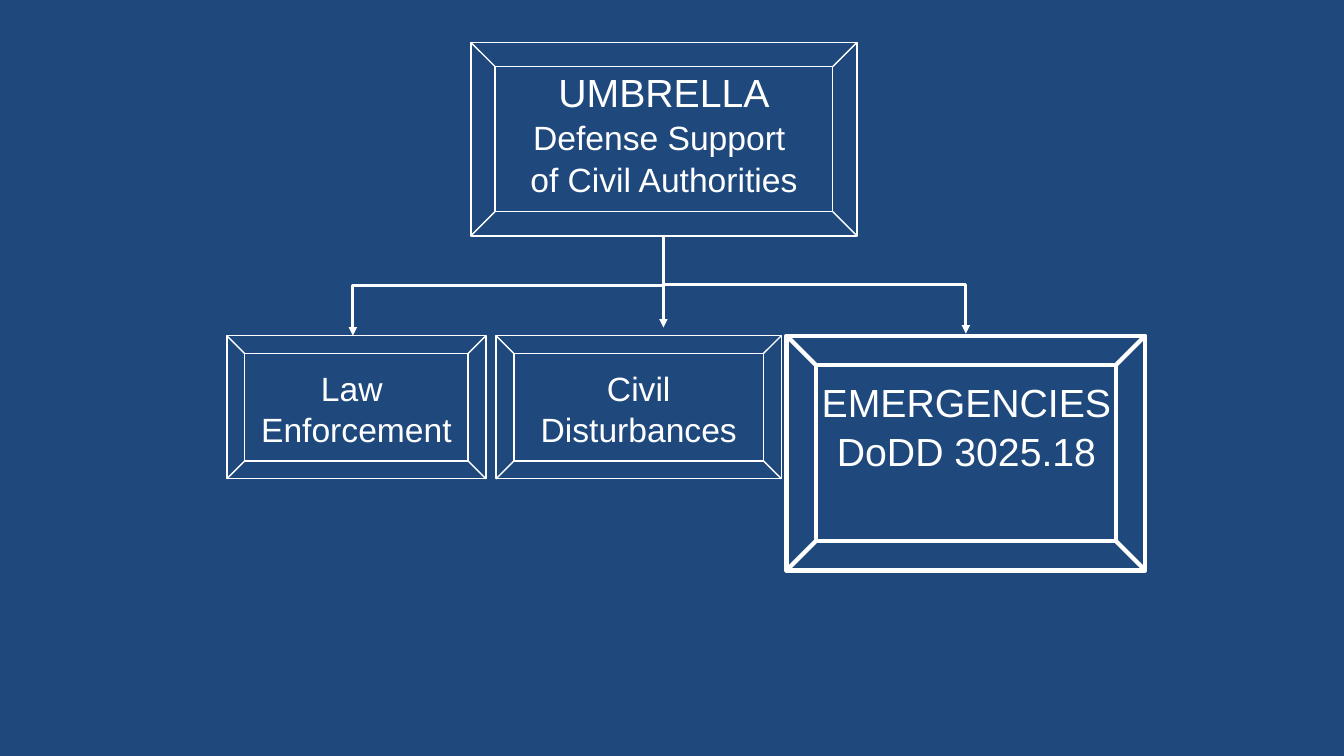
from pptx import Presentation
from pptx.dml.color import RGBColor
from pptx.enum.shapes import MSO_CONNECTOR, MSO_SHAPE
from pptx.enum.text import PP_ALIGN
from pptx.oxml.ns import qn
from pptx.util import Inches, Pt
from lxml import etree

BEVEL = MSO_SHAPE.BEVEL
STRAIGHT, ELBOW = MSO_CONNECTOR.STRAIGHT, MSO_CONNECTOR.ELBOW
CENTER = PP_ALIGN.CENTER
NAVY, WHITE = "1F497D", "FFFFFF"
BRANCH_TOP = 3.33
TRUNK_X, TRUNK_TOP, FORK_Y = 6.58, 2.33, 2.83


def rgb(code):
    return RGBColor.from_string(code)


def add_arrow(kind, x1, y1, x2, y2):
    arrow = slide.shapes.add_connector(kind, *map(Inches, (x1, y1, x2, y2)))
    arrow.line.color.rgb = rgb(WHITE)
    arrow.line.width = Pt(2)
    head = etree.SubElement(arrow.line._get_or_add_ln(), qn("a:tailEnd"))
    head.set("type", "triangle")
    etree.SubElement(arrow._element.spPr, qn("a:effectLst"))
    return arrow


prs = Presentation()
prs.slide_width, prs.slide_height = Inches(13.33), Inches(7.5)
slide = prs.slides.add_slide(prs.slide_layouts[6])
slide.background.fill.solid()
slide.background.fill.fore_color.rgb = rgb(NAVY)

# frame (left, top, width, height), border, label area, wraps, lines with sizes
boxes = [
    ((4.67, 0.42, 3.83, 1.92), 1, (5.1, 0.61, 2.97, 1.38), False,
     [("UMBRELLA", 28), ("Defense Support ", 24), ("of Civil Authorities", 24)]),
    ((7.8, BRANCH_TOP, 3.56, 2.33), 3, (7.75, 3.69, 3.67, 1.44), True,
     [("EMERGENCIES", 28), ("DoDD 3025.18", 28)]),
    ((4.92, BRANCH_TOP, 2.83, 1.42), 1, (5.25, 3.58, 2.17, 0.91), False,
     [("Civil", 24), ("Disturbances", 24)]),
    ((2.25, BRANCH_TOP, 2.57, 1.42), 1, (2.48, 3.58, 2.11, 0.91), False,
     [("Law ", 24), ("Enforcement", 24)]),
]
for frame_area, border, label_area, wraps, lines in boxes:
    group = slide.shapes.add_group_shape()
    frame = group.shapes.add_shape(BEVEL, *map(Inches, frame_area))
    frame.shadow.inherit = False
    frame.fill.background()
    frame.line.color.rgb = rgb(WHITE)
    frame.line.width = Pt(border)

    label = group.shapes.add_textbox(*map(Inches, label_area)).text_frame
    label.word_wrap = wraps
    label.text = "\n".join(text for text, size in lines)
    for paragraph, (text, size) in zip(label.paragraphs, lines):
        paragraph.alignment = CENTER
        paragraph.line_spacing = 1.04
        font = paragraph.runs[0].font
        for attribute, value in {"name": "Arial", "size": Pt(size)}.items():
            setattr(font, attribute, value)
        font.color.rgb = rgb(WHITE)

# An elbow leaves sideways, so lay each one out on its side and turn it 90°
for target_x, target_y in [(9.58, 3.31), (3.5, BRANCH_TOP)]:
    middle_x, middle_y = (TRUNK_X + target_x) / 2, (TRUNK_TOP + target_y) / 2
    half_drop, half_run = (target_y - TRUNK_TOP) / 2, (target_x - TRUNK_X) / 2
    elbow = add_arrow(ELBOW, middle_x - half_drop, middle_y + half_run,
                      middle_x + half_drop, middle_y - half_run)
    elbow._element.spPr.find(qn("a:xfrm")).set("rot", str(90 * 60000))
add_arrow(STRAIGHT, TRUNK_X, FORK_Y, TRUNK_X, 3.25)

prs.save("out.pptx")
